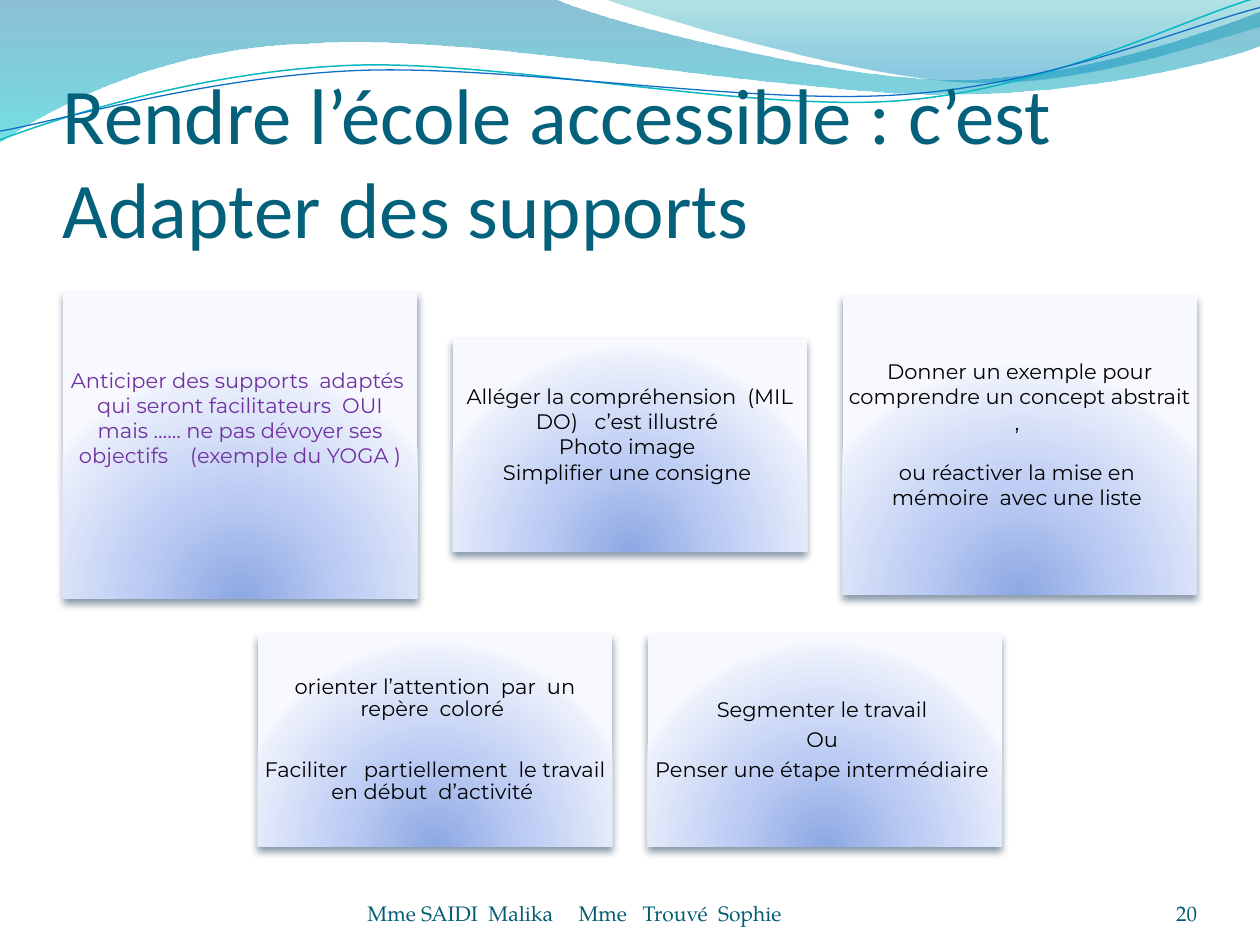
from copy import deepcopy
from dataclasses import dataclass

from pptx import Presentation
from pptx.dml.color import RGBColor
from pptx.enum.shapes import MSO_SHAPE
from pptx.enum.text import MSO_ANCHOR, PP_ALIGN
from pptx.oxml import parse_xml
from pptx.oxml.ns import nsdecls, qn
from pptx.util import Pt

RECTANGLE = MSO_SHAPE.RECTANGLE
BOTTOM, MIDDLE = MSO_ANCHOR.BOTTOM, MSO_ANCHOR.MIDDLE
LEFT, CENTER, RIGHT = PP_ALIGN.LEFT, PP_ALIGN.CENTER, PP_ALIGN.RIGHT

SLIDE_WIDTH, SLIDE_HEIGHT = 720, 540
CARD_WIDTH, CARD_GAP = 202.5, 20.25
CARD_STOPS = [(0, "8DA8E3", 100), (43, "BBCBF3", 100),
              (93, "EAEFFB", 100), (100, "F7F9FF", 100)]
CARD_GLOW = ('<a:path path="circle"><a:fillToRect l="50000" t="130000" '
             'r="50000" b="-30000"/></a:path>')
DOWNWARD = '<a:lin ang="5400000" scaled="0"/>'


@dataclass
class TextStyle:
    font: str
    size: float
    color: str
    align: PP_ALIGN = LEFT
    line_spacing: float = 1.0
    gap: float = 0  # space before each paragraph after the first


@dataclass
class Card:
    height: float
    paragraphs: list[str]
    color: str = "000000"
    line_spacing: float = 1.0
    gap: float = 0
    lift: float = 0  # extra bottom margin that raises the text


@dataclass
class Wave:
    start: tuple
    segments: list  # one point is a line, three points are a Bezier curve
    stops: list | None = None
    line: tuple | None = None


@dataclass
class Label:
    box: tuple
    text: str
    style: TextStyle
    top_margin: float = 0
    tab: float | None = None


WAVES = [
    Wave((0, 0), [
        [(316.8, -0.7)],
        [(342.7, 12.2), (478.1, 45.4), (545.8, 45.4)],
        [(614.2, 45.4), (689.8, 18.7), (720, 6.5)],
        [(720.7, 25.9)],
        [(707.8, 31.7), (626.4, 54.7), (537.1, 54)],
        [(447.8, 54), (275, 20.2), (185, 24.5)],
        [(92.9, 25.9), (33.1, 59.8), (-0.7, 81.4)],
    ], stops=[(0, "0074A1", 45), (100, "00C6CF", 55)]),
    Wave((344.9, -0.7), [
        [(366.5, 7.9), (491, 44.6), (553.7, 46.8)],
        [(616.3, 49.7), (691.9, 23), (720, 15.1)],
        [(720, 0)],
    ], stops=[(0, "00A1A9", 30), (80, "008BBF", 45)]),
    Wave((0, 79.9), [
        [(34.6, 67), (113.8, 41), (199.4, 37.4)],
        [(284.4, 33.8), (427, 64.1), (513.4, 57.6)],
        [(599.8, 51.1), (675.4, 10.8), (718.6, -1.4)],
    ], line=("0AB8BF", 0.85)),
    Wave((0, 74.9), [
        [(33.8, 69.1), (118.1, 43.9), (203.8, 40.3)],
        [(290.2, 36.7), (429.8, 60.5), (516.2, 54)],
        [(601.9, 48.2), (677.5, 15.1), (720, 4.3)],
    ], line=("0F6FC6", 0.75)),
]

# Each row: vertical centre, cards from left to right
CARD_ROWS = [
    (254.25, [
        Card(175.5, ["Anticiper des supports  adaptés \vqui seront facilitateurs  OUI\v"
                     "mais …… ne pas dévoyer ses objectifs    (exemple du YOGA )"],
             color="7030A0", lift=31),
        Card(121.5, ["Alléger la compréhension  (MIL DO)   c’est illustré ",
                     "Photo image ", "Simplifier une consigne "], lift=12.5),
        Card(171, ["Donner un exemple pour comprendre un concept abstrait , ",
                   "ou réactiver la mise en \vmémoire  avec une liste "],
             gap=14.4, lift=12),
    ]),
    (423, [
        Card(121.5, ["orienter l’attention  par  un repère  coloré ",
                     "Faciliter   partiellement  le travail en début  d’activité "],
             line_spacing=0.9, gap=21.4),
        Card(121.5, ["Segmenter le travail ", "Ou ", "Penser une étape intermédiaire "],
             line_spacing=0.9, gap=4.2),
    ]),
]

FOOTER_STYLE = dict(font="TeX Gyre Pagella", size=12, color="045D75")
LABELS = [
    Label((36, 55.5, 648, 90), "Rendre l’école accessible : c’est Adapter des supports",
          TextStyle("Calibri", 45, "04617B"), top_margin=3.6),
    Label((210, 500.5, 264, 28.75), "Mme SAIDI  Malika\tMme   Trouvé  Sophie",
          TextStyle(**FOOTER_STYLE), tab=120.6),
    Label((624, 500.5, 60, 28.75), "20", TextStyle(**FOOTER_STYLE, align=RIGHT)),
]


def rgb(color: str) -> RGBColor:
    return RGBColor.from_string(color)


def set_all(target, values: dict) -> None:
    for name, value in values.items():
        setattr(target, name, value)


def fill_gradient(shape, stops: list, direction: str) -> None:
    shape.fill.solid()
    properties = shape.element.spPr
    stop_xml = "".join(
        f'<a:gs pos="{position * 1000}"><a:srgbClr val="{color}">'
        f'<a:alpha val="{opacity * 1000}"/></a:srgbClr></a:gs>'
        for position, color, opacity in stops)
    gradient = parse_xml(f'<a:gradFill {nsdecls("a")} rotWithShape="1">'
                         f'<a:gsLst>{stop_xml}</a:gsLst>{direction}</a:gradFill>')
    properties.replace(properties.find(qn("a:solidFill")), gradient)


def write_text(frame, paragraphs: list[str], style: TextStyle, **layout) -> None:
    set_all(frame, dict(word_wrap=True, **layout))
    for index, content in enumerate(paragraphs):
        paragraph = frame.add_paragraph() if index else frame.paragraphs[0]
        paragraph.text = content
        set_all(paragraph, dict(alignment=style.align, line_spacing=style.line_spacing,
                                space_before=Pt(style.gap if index else 0)))
        for run in paragraph.runs:
            set_all(run.font, dict(name=style.font, size=Pt(style.size)))
            run.font.color.rgb = rgb(style.color)
        # Line breaks take the same size as the words around them
        for line_break in paragraph._p.findall(qn("a:br")):
            line_break.append(deepcopy(paragraph.runs[0]._r.rPr))


def bend_curves(shape, segments: list) -> None:
    """Turn each run of three control-point lines into one Bezier curve."""
    lines = iter(list(shape.element.spPr.iter(qn("a:lnTo"))))
    for segment in segments:
        group = [next(lines) for _ in segment]
        if len(group) == 3:
            curve = parse_xml(f'<a:cubicBezTo {nsdecls("a")}/>')
            group[0].addprevious(curve)
            for line in group:
                curve.append(line[0])
                line.getparent().remove(line)


def draw_wave(slide, wave: Wave) -> None:
    points = [point for segment in wave.segments for point in segment]
    builder = slide.shapes.build_freeform(*map(Pt, wave.start))
    builder.add_line_segments([(Pt(x), Pt(y)) for x, y in points],
                              close=wave.stops is not None)
    shape = builder.convert_to_shape()
    bend_curves(shape, wave.segments)
    shape.shadow.inherit = False
    if wave.stops:
        fill_gradient(shape, wave.stops, DOWNWARD)
        shape.line.fill.background()
    else:
        color, width = wave.line
        shape.fill.background()
        shape.line.color.rgb = rgb(color)
        shape.line.width = Pt(width)


def draw_card(slide, card: Card, left: float, center: float) -> None:
    box = (left, center - card.height / 2, CARD_WIDTH, card.height)
    shape = slide.shapes.add_shape(RECTANGLE, *map(Pt, box))
    fill_gradient(shape, CARD_STOPS, CARD_GLOW)
    shape.line.fill.background()
    shape.shadow.inherit = False
    shape.element.spPr.find(qn("a:effectLst")).append(parse_xml(
        f'<a:outerShdw {nsdecls("a")} blurRad="{Pt(4.5)}" dist="{Pt(3)}" dir="5400000" '
        'rotWithShape="0"><a:srgbClr val="042747"><a:alpha val="48000"/></a:srgbClr>'
        '</a:outerShdw>'))
    style = TextStyle("Montserrat", 12, card.color, CENTER, card.line_spacing, card.gap)
    write_text(shape.text_frame, card.paragraphs, style, vertical_anchor=MIDDLE,
               margin_left=Pt(3.6), margin_right=Pt(3.6), margin_top=Pt(3.6),
               margin_bottom=Pt(3.6 + card.lift))


def draw_label(slide, label: Label) -> None:
    frame = slide.shapes.add_textbox(*map(Pt, label.box)).text_frame
    write_text(frame, [label.text], label.style, vertical_anchor=BOTTOM, margin_left=0,
               margin_right=0, margin_top=Pt(label.top_margin), margin_bottom=0)
    if label.tab:
        frame.paragraphs[0]._p.get_or_add_pPr().append(parse_xml(
            f'<a:tabLst {nsdecls("a")}><a:tab pos="{Pt(label.tab)}" algn="l"/></a:tabLst>'))


def main() -> None:
    deck = Presentation()
    set_all(deck, dict(slide_width=Pt(SLIDE_WIDTH), slide_height=Pt(SLIDE_HEIGHT)))
    slide = deck.slides.add_slide(deck.slide_layouts[6])
    for wave in WAVES:
        draw_wave(slide, wave)
    # Card rows are centred across the slide
    pitch = CARD_WIDTH + CARD_GAP
    for center, cards in CARD_ROWS:
        start = (SLIDE_WIDTH - len(cards) * pitch + CARD_GAP) / 2
        for column, card in enumerate(cards):
            draw_card(slide, card, start + column * pitch, center)
    # Title, footer and slide number
    for label in LABELS:
        draw_label(slide, label)
    deck.save("out.pptx")


if __name__ == "__main__":
    main()
